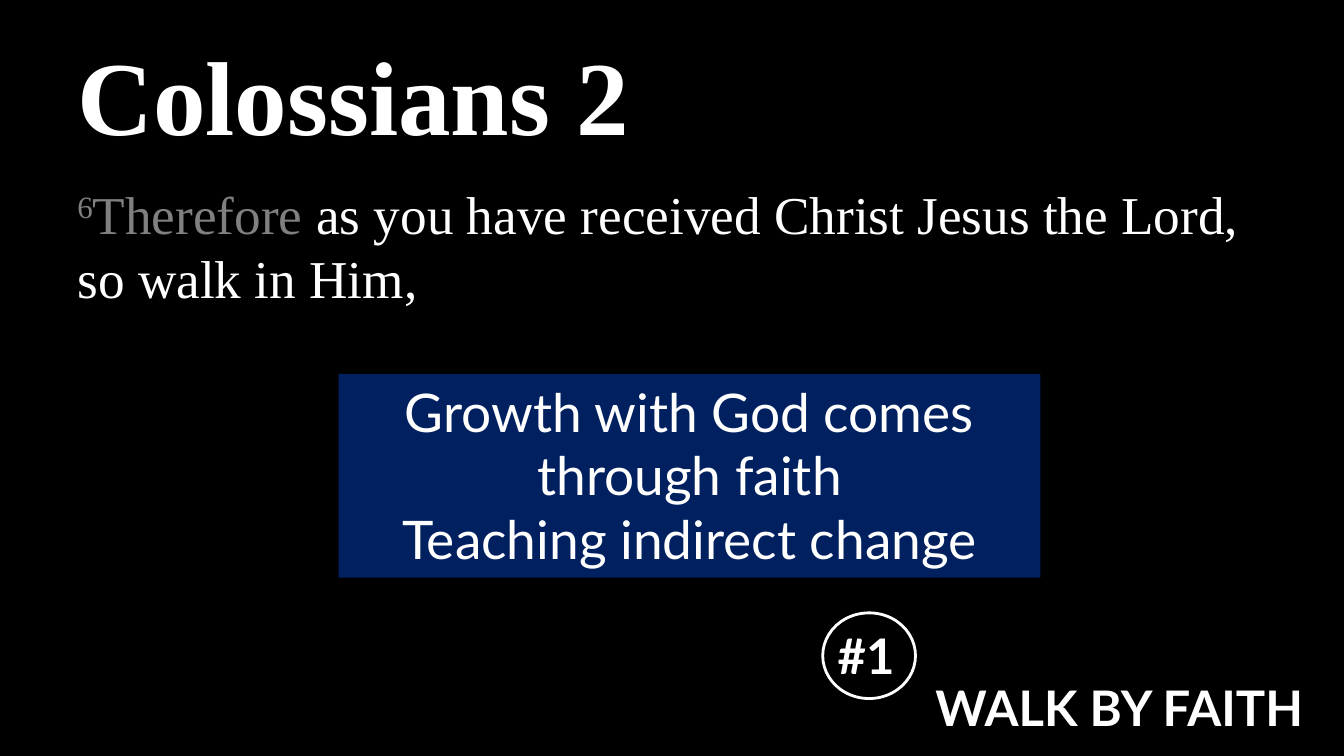
import pptx
import pptx.util
import pptx.dml.color
import pptx.enum.shapes
import pptx.enum.text
from pptx.util import Inches

COLOURS = {"black": "000000", "white": "FFFFFF", "grey": "808080", "navy": "002060"}
SERIF, SANS = "Times New Roman", "Lato"
SHAPES = pptx.enum.shapes.MSO_SHAPE
ALIGN = pptx.enum.text.PP_ALIGN
ANCHOR = pptx.enum.text.MSO_ANCHOR


def colour(name):
    return pptx.dml.color.RGBColor.from_string(COLOURS[name])


def add_span(para, text, font, size, ink="white", bold=False):
    span = para.add_run()
    span.text = text
    span.font.name = font
    span.font.size = pptx.util.Pt(size)
    span.font.bold = bold
    span.font.color.rgb = colour(ink)
    return span


def add_text_box(page, box, anchor=ANCHOR.TOP):
    frame = page.shapes.add_textbox(*map(Inches, box)).text_frame
    frame.word_wrap = True
    frame.vertical_anchor = anchor
    return frame


def add_plain_shape(page, kind, box, fill=None):
    shape = page.shapes.add_shape(kind, *map(Inches, box))
    shape.shadow.inherit = False
    shape.line.fill.background()
    if fill:
        shape.fill.solid()
        shape.fill.fore_color.rgb = colour(fill)
    else:
        shape.fill.background()
    return shape


def add_panel(page, box, fill, lines, size, align=ALIGN.LEFT, bold=False):
    """Filled rectangle with one paragraph per line of text."""
    frame = add_plain_shape(page, SHAPES.RECTANGLE, box, fill).text_frame
    frame.word_wrap = True
    frame.vertical_anchor = ANCHOR.TOP
    for number, line in enumerate(lines):
        para = frame.add_paragraph() if number else frame.paragraphs[0]
        para.alignment = align
        add_span(para, line, SANS, size, bold=bold)


def add_title(page, box):
    frame = add_text_box(page, box, ANCHOR.MIDDLE)
    add_span(frame.paragraphs[0], "Colossians 2", SERIF, 75, bold=True)


def add_verse(page, box):
    para = add_text_box(page, box).paragraphs[0]
    para.space_before = pptx.util.Pt(7.6)
    number = add_span(para, "6", SERIF, 38, "grey")
    number.font._element.set("baseline", "30000")
    add_span(para, "Therefore ", SERIF, 38, "grey")
    add_span(para, "as you have received Christ Jesus the Lord, so walk in Him,", SERIF, 38)


def add_principle(page, box):
    """Numbered badge followed by the name of the principle."""
    left, top, width, height = box
    label_height = 0.69
    add_panel(page, (left + 1.02, top + height - label_height, width - 1.02, label_height),
              "black", ["WALK BY FAITH"], 35, bold=True)
    add_panel(page, (left + 0.05, top + 0.08, 0.87, label_height),
              "black", ["#1"], 35, bold=True)
    ring = add_plain_shape(page, SHAPES.OVAL, (left, top, 0.92, 0.85))
    ring.line.color.rgb = colour("white")
    ring.line.width = pptx.util.Pt(2)


def build_verse_slide(deck):
    page = deck.slides.add_slide(deck.slide_layouts[6])
    page.background.fill.solid()
    page.background.fill.fore_color.rgb = colour("black")
    add_title(page, (0.67, 0.3, 12, 1.25))
    add_verse(page, (0.67, 1.75, 12, 4.95))
    add_principle(page, (8.16, 6.08, 5.04, 1.28))
    add_panel(page, (3.36, 3.71, 6.96, 2.02), "navy",
              ["Growth with God comes through faith", "Teaching indirect change"],
              38, ALIGN.CENTER)


def main():
    deck = pptx.Presentation()
    deck.slide_width, deck.slide_height = Inches(13.33), Inches(7.5)
    build_verse_slide(deck)
    deck.save("out.pptx")


if __name__ == "__main__":
    main()
